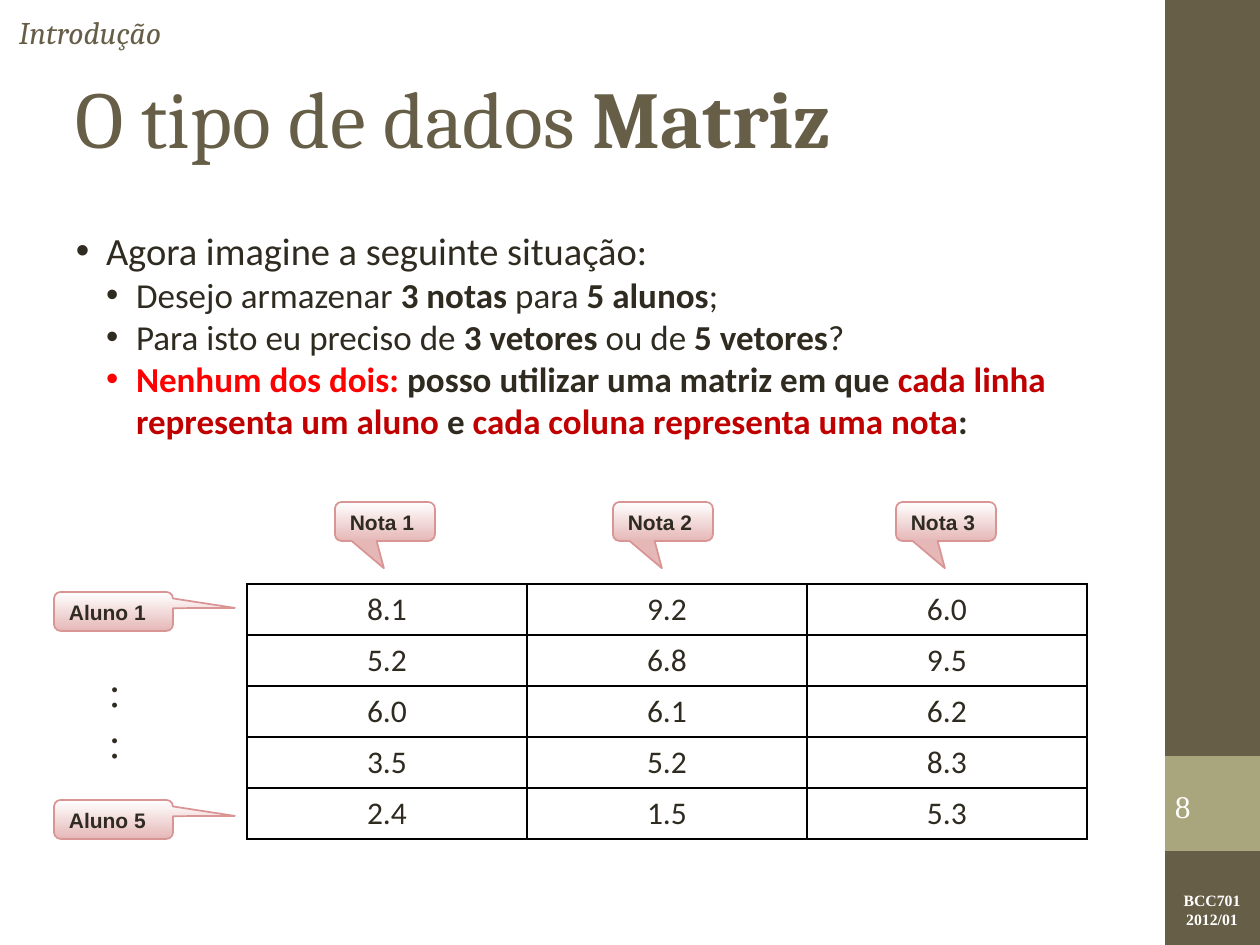
from lxml import etree
from pptx import Presentation
from pptx import util as u
from pptx.dml.color import RGBColor
from pptx.enum import shapes, text
from pptx.oxml.ns import qn

HUE = dict(olive="675E47", sage="A9A57C", white="FFFFFF", ink="2F2B20", red="FF0000",
           wine="C00000", pink="E5B8B7", rose="D99594", black="000000")
SIDE = text.PP_ALIGN
MID = text.MSO_ANCHOR.MIDDLE
TOP = text.MSO_ANCHOR.TOP
NOTES = [["8.1", "9.2", "6.0"], ["5.2", "6.8", "9.5"], ["6.0", "6.1", "6.2"],
         ["3.5", "5.2", "8.3"], ["2.4", "1.5", "5.3"]]
BOLD = dict(bold=True)
WINE = dict(bold=True, color="wine")
ITEMS = [
    (0, [("Agora imagine a seguinte situação:", dict(size=22))]),
    (1, [("Desejo armazenar ", {}), ("3 notas", BOLD), (" para ", {}),
         ("5 alunos", BOLD), (";", {})]),
    (1, [("Para isto eu preciso de ", {}), ("3 vetores ", BOLD), ("ou de ", {}),
         ("5 vetores", BOLD), ("?", {})]),
    (1, [("Nenhum dos dois:", dict(bold=True, color="red")),
         (" posso utilizar uma matriz em que ", BOLD),
         ("cada linha representa um aluno ", WINE), ("e ", BOLD),
         ("cada coluna representa uma nota", WINE), (":", BOLD)]),
]


def px(n):
    """Turn pixels into EMU."""
    return u.Emu(round(n * 914400 / 126))


def rgb(name):
    """Look up a colour."""
    return RGBColor.from_string(HUE[name])


def style(font, look):
    """Set font attributes from a dict."""
    for key, val in look.items():
        if key == "color":
            font.color.rgb = rgb(val)
        else:
            setattr(font, key, u.Pt(val) if key == "size" else val)


def write(par, runs, look, align=SIDE.LEFT):
    """Fill a paragraph with styled runs."""
    par.alignment = align
    for words, extra in runs:
        run = par.add_run()
        run.text = words
        style(run.font, {**look, **extra})


def frame(shape, anchor=TOP, pad=(13, 6), wrap=True):
    """Set up a text frame and return it."""
    body = shape.text_frame
    fmt = dict(word_wrap=wrap, vertical_anchor=anchor,
               margin_left=px(pad[0]), margin_right=px(pad[0]),
               margin_top=px(pad[1]), margin_bottom=px(pad[1]))
    for key, val in fmt.items():
        setattr(body, key, val)
    return body


def label(slide, box, lines, look, align=SIDE.LEFT, **fmt):
    """Add a text box with one paragraph per list of runs."""
    body = frame(slide.shapes.add_textbox(*map(px, box)), **fmt)
    for i, runs in enumerate(lines):
        par = body.add_paragraph() if i else body.paragraphs[0]
        write(par, runs, look, align)
    return body


def block(slide, box, hue):
    """Add a plain filled rectangle."""
    rect = slide.shapes.add_shape(shapes.MSO_SHAPE.RECTANGLE, *map(px, box))
    rect.shadow.inherit = False
    rect.fill.solid()
    rect.fill.fore_color.rgb = rgb(hue)
    rect.line.fill.background()


def band(slide, box):
    """Draw the side band with page number and course."""
    x, y, w, h = box
    look = dict(name="Times New Roman", color="white")
    block(slide, box, "olive")
    block(slide, (x, y + 756, w, w), "sage")
    label(slide, (x + 1, y + 885, w - 3, 50), [[("BCC701", {})], [("2012/01", {})]],
          dict(look, size=9, bold=True), SIDE.CENTER)
    label(slide, (x + 10, y + 779, 76, 54), [[("8", {})]], dict(look, size=18),
          anchor=MID, pad=(0, 0))


def head(slide, box):
    """Write the section name and the title."""
    x, y, w, h = box
    look = dict(name="Cambria", color="olive")
    label(slide, (x - 57, y - 28, w, 43), [[("Introdução", {})]],
          dict(look, size=18, italic=True), anchor=MID)
    label(slide, box, [[("O tipo de dados ", {}), ("Matriz", BOLD)]],
          dict(look, size=46), anchor=MID)


def bullets(slide, box):
    """Write the bulleted text on two levels."""
    look = dict(name="Calibri", size=20, color="ink")
    body = label(slide, box, [runs for _, runs in ITEMS], look)
    for par, (level, _) in zip(body.paragraphs, ITEMS):
        par.level = level
        prop = par._p.get_or_add_pPr()
        prop.set("marL", str(px(30 * (level + 1))))
        prop.set("indent", str(-px(30)))
        etree.SubElement(prop, qn("a:buFont")).set("typeface", "Arial")
        etree.SubElement(prop, qn("a:buChar")).set("char", "•")


def border(cell):
    """Draw thin black lines around a cell."""
    prop = cell._tc.get_or_add_tcPr()
    for i, side in enumerate(("lnL", "lnR", "lnT", "lnB")):
        line = etree.Element(qn("a:" + side), w=str(u.Pt(1)))
        fill = etree.SubElement(line, qn("a:solidFill"))
        etree.SubElement(fill, qn("a:srgbClr")).set("val", HUE["black"])
        prop.insert(i, line)


def grid(slide, box):
    """Add the table of marks."""
    x, y, w, h = box
    rows, cols = len(NOTES), len(NOTES[0])
    table = slide.shapes.add_table(rows, cols, *map(px, box)).table
    table.first_row = table.horz_banding = False
    for col in table.columns:
        col.width = px(w // cols)
    for r, row in enumerate(NOTES):
        table.rows[r].height = px(h // rows)
        for c, mark in enumerate(row):
            cell = table.cell(r, c)
            cell.fill.background()
            border(cell)
            write(cell.text_frame.paragraphs[0], [(mark, {})],
                  dict(name="Calibri", size=18, color="ink", bold=False), SIDE.CENTER)


def callout(slide, box, words, tip):
    """Add a shaded callout pointing at the table."""
    shape = slide.shapes.add_shape(
        shapes.MSO_SHAPE.ROUNDED_RECTANGULAR_CALLOUT, *map(px, box))
    shape.shadow.inherit = False
    for i, val in enumerate((*tip, 0.17)):
        shape.adjustments[i] = val
    shape.fill.gradient()
    shape.fill.gradient_angle = 270
    for stop, hue, at in zip(shape.fill.gradient_stops, ("white", "pink"), (0, 1)):
        stop.color.rgb = rgb(hue)
        stop.position = at
    shape.line.color.rgb = rgb("rose")
    shape.line.width = u.Pt(1)
    write(frame(shape).paragraphs[0], [(words, {})],
          dict(name="Arial", size=12, bold=True, color="ink"))


def tags(slide, box):
    """Label the columns and rows of the table."""
    x, y, w, h = box
    for i, dx in enumerate((88, 366, 649), 1):
        callout(slide, (x + dx, y - 82, 100, 39), f"Nota {i}", (-0.01, 1.2))
    for n, dy in ((1, 8), (5, 216)):
        callout(slide, (x - 193, y + dy, 119, 39), f"Aluno {n}", (1.02, -0.09))
    label(slide, (x - 151, y + 76, 37, 113), [[(":", {})]] * 2,
          dict(name="Times New Roman", size=24, color="ink"), wrap=False)


def main():
    """Build the slide."""
    deck = Presentation()
    deck.slide_width, deck.slide_height = px(1260), px(945)
    slide = deck.slides.add_slide(deck.slide_layouts[6])
    area = (247, 584, 840, 255)
    band(slide, (1165, 0, 95, 945))
    head(slide, (63, 38, 1050, 157))
    bullets(slide, (63, 221, 1050, 661))
    grid(slide, area)
    tags(slide, area)
    deck.save("out.pptx")


if __name__ == "__main__":
    main()
